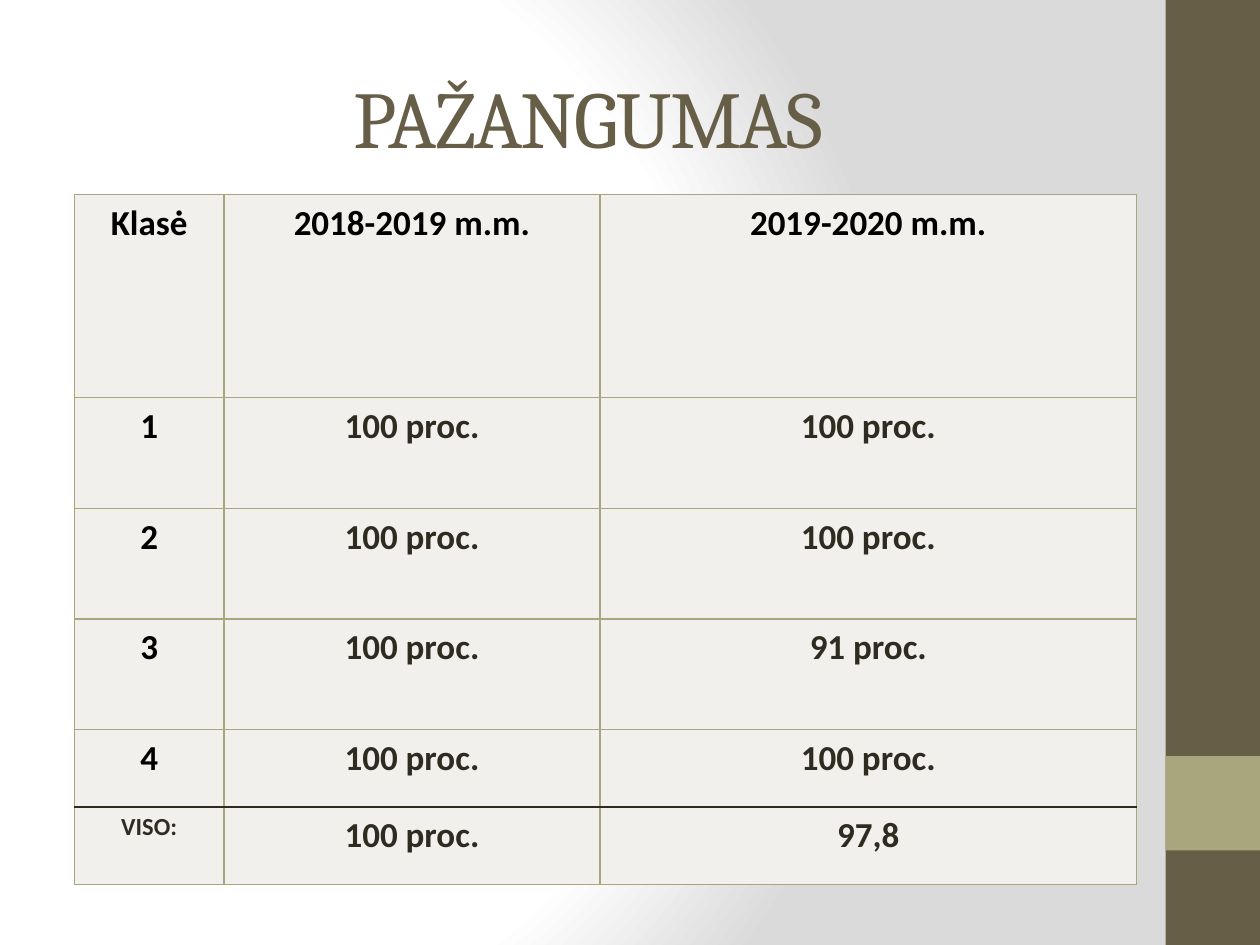
from pptx import Presentation
from pptx.dml.color import RGBColor
from pptx.enum.shapes import MSO_SHAPE
from pptx.enum.text import MSO_ANCHOR, PP_ALIGN
from pptx.oxml import parse_xml
from pptx.oxml.ns import nsdecls
from pptx.util import Pt

BROWN = RGBColor(0x67, 0x5E, 0x47)
OLIVE = RGBColor(0xA9, 0xA5, 0x7C)
CELL_FILL = RGBColor(0xF1, 0xF0, 0xEC)
BLACK = RGBColor(0x00, 0x00, 0x00)
DARK = RGBColor(0x2F, 0x2B, 0x20)
WHITE = RGBColor(0xFF, 0xFF, 0xFF)
GREY = RGBColor(0xDA, 0xDA, 0xDA)

COLUMN_WIDTHS = [85.5, 215, 306.5]
ROW_HEIGHTS = [116, 63.2, 63.2, 63.2, 44.3, 44.3]
ROWS = [
    ["Klasė", "2018-2019 m.m.", "2019-2020 m.m."],
    ["1", "100 proc.", "100 proc."],
    ["2", "100 proc.", "100 proc."],
    ["3", "100 proc.", "91 proc."],
    ["4", "100 proc.", "100 proc."],
    ["VISO:", "100 proc.", "97,8"],
]
TOTAL_ROW = len(ROWS) - 1


def set_background(slide):
    """Give the slide a circular gradient from white to grey."""
    fill = slide.background.fill
    fill.solid()
    stops = "".join(
        f'<a:gs pos="{percent * 1000}"><a:srgbClr val="{color}"/></a:gs>'
        for percent, color in [(0, WHITE), (75, WHITE), (100, GREY)]
    )
    gradient = parse_xml(
        f'<a:gradFill {nsdecls("a")} rotWithShape="1"><a:gsLst>{stops}</a:gsLst>'
        '<a:path path="circle">'
        '<a:fillToRect l="20000" t="50000" r="100000" b="50000"/>'
        "</a:path></a:gradFill>"
    )
    solid = slide.element.xpath("p:cSld/p:bg/p:bgPr/a:solidFill")[0]
    solid.getparent().replace(solid, gradient)


def add_block(slide, left, top, width, height, color):
    shape = slide.shapes.add_shape(
        MSO_SHAPE.RECTANGLE, Pt(left), Pt(top), Pt(width), Pt(height)
    )
    shape.shadow.inherit = False
    shape.fill.solid()
    shape.fill.fore_color.rgb = color
    shape.line.fill.background()


def add_run(paragraph, text, font_name, size, color, bold=False):
    paragraph.alignment = PP_ALIGN.CENTER
    run = paragraph.add_run()
    run.text = text
    run.font.name = font_name
    run.font.size = Pt(size)
    run.font.bold = bold
    run.font.color.rgb = color
    return run


def add_title(slide, text):
    box = slide.shapes.add_textbox(Pt(36), Pt(21.6), Pt(600), Pt(90))
    frame = box.text_frame
    frame.word_wrap = True
    frame.vertical_anchor = MSO_ANCHOR.MIDDLE
    run = add_run(frame.paragraphs[0], text, "Cambria", 46, BROWN)
    run.font._element.set("spc", "-100")


def set_borders(cell, top, bottom):
    properties = cell._tc.get_or_add_tcPr()
    sides = [("L", OLIVE), ("R", OLIVE), ("T", top), ("B", bottom)]
    for side, color in sides:
        properties.append(parse_xml(
            f'<a:ln{side} {nsdecls("a")} w="{Pt(1)}"><a:solidFill>'
            f'<a:srgbClr val="{color}"/></a:solidFill></a:ln{side}>'
        ))


def fill_cell(cell, text, row, column):
    set_borders(
        cell,
        top=DARK if row == TOTAL_ROW else OLIVE,
        bottom=DARK if row == TOTAL_ROW - 1 else OLIVE,
    )
    cell.fill.solid()
    cell.fill.fore_color.rgb = CELL_FILL
    cell.margin_left = cell.margin_right = Pt(5)
    cell.margin_top, cell.margin_bottom = Pt(0.7), Pt(0)
    is_total_label = row == TOTAL_ROW and column == 0
    is_heading = row == 0 or (column == 0 and not is_total_label)
    paragraph = cell.text_frame.paragraphs[0]
    paragraph.line_spacing = 1.15
    add_run(paragraph, text, "Calibri", 14 if is_total_label else 20,
            BLACK if is_heading else DARK, bold=True)


def add_results_table(slide):
    table = slide.shapes.add_table(
        len(ROWS), len(COLUMN_WIDTHS), Pt(42.5), Pt(111.3),
        Pt(sum(COLUMN_WIDTHS)), Pt(sum(ROW_HEIGHTS)),
    ).table
    table.first_row = table.horz_banding = False
    for column, width in zip(table.columns, COLUMN_WIDTHS):
        column.width = Pt(width)
    for row, height in zip(table.rows, ROW_HEIGHTS):
        row.height = Pt(height)
    for row, texts in enumerate(ROWS):
        for column, text in enumerate(texts):
            fill_cell(table.cell(row, column), text, row, column)


def main():
    presentation = Presentation()
    presentation.slide_width, presentation.slide_height = Pt(720), Pt(540)
    slide = presentation.slides.add_slide(presentation.slide_layouts[6])
    set_background(slide)
    add_block(slide, 666, 0, 54, 540, BROWN)
    add_block(slide, 666, 432, 54, 54, OLIVE)
    add_title(slide, "PAŽANGUMAS")
    add_results_table(slide)
    presentation.save("out.pptx")


if __name__ == "__main__":
    main()
